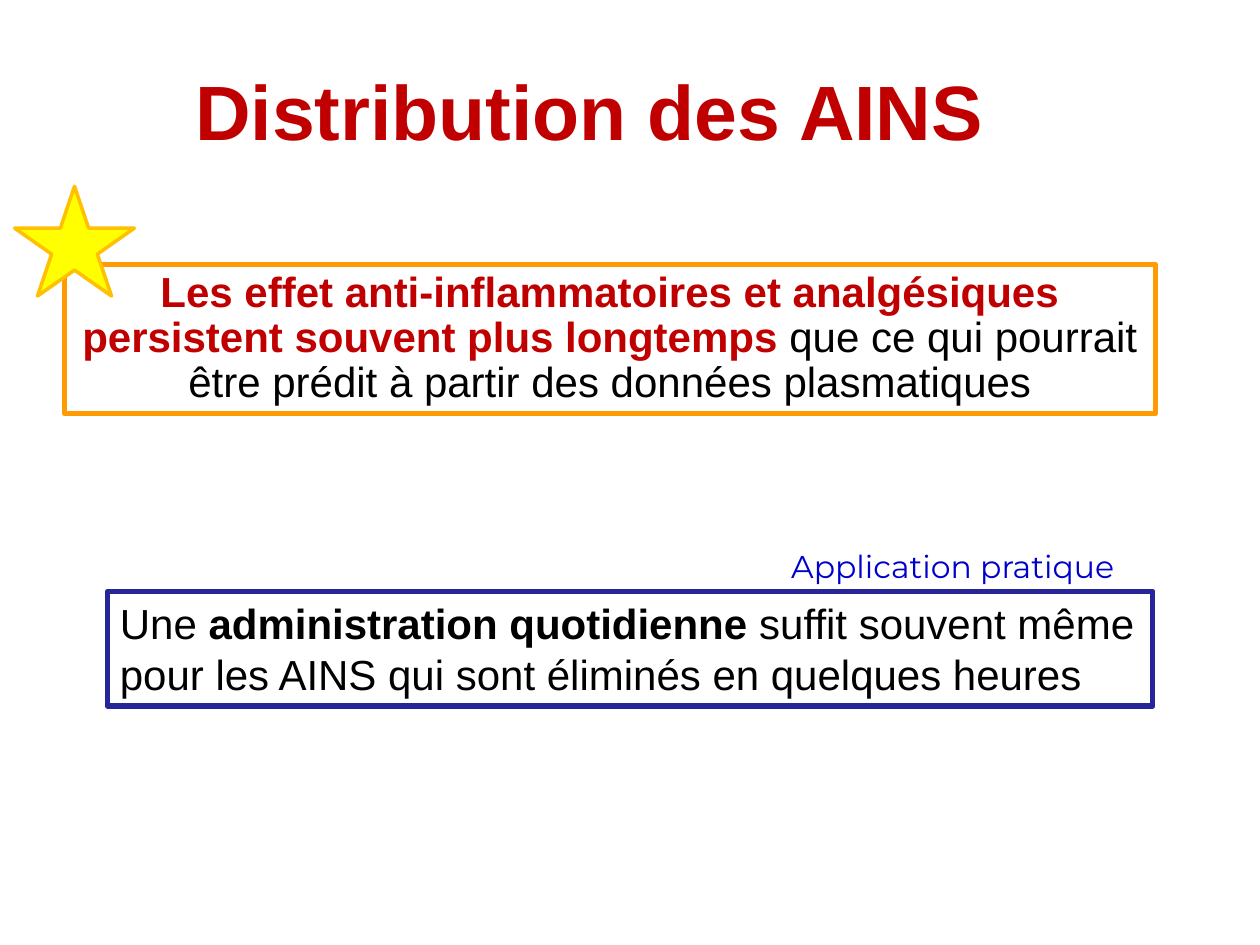
from pptx import Presentation
from pptx.dml.color import RGBColor as RGB
from pptx.enum.shapes import MSO_SHAPE as Shape
from pptx.enum.text import MSO_ANCHOR as Anchor, PP_ALIGN as Align
from pptx.util import Pt

COLORS = {
    "red": "C00000", "black": "000000", "blue": "0000CC", "navy": "262699",
    "orange": "FE9B03", "gold": "FFC000", "yellow": "FFFF00",
}


def color(name):
    return RGB.from_string(COLORS[name])


def write(shape, runs, size, font="Arial", wrap=True, anchor=Anchor.TOP, **style):
    frame = shape.text_frame
    frame.word_wrap = wrap
    frame.vertical_anchor = anchor
    para = frame.paragraphs[0]
    for key, value in style.items():
        setattr(para, key, value)
    for text, tint, bold in runs:
        run = para.add_run()
        run.text = text
        look = {"name": font, "size": Pt(size), "bold": bold}
        for key, value in look.items():
            setattr(run.font, key, value)
        run.font.color.rgb = color(tint)


deck = Presentation()
deck.slide_width, deck.slide_height = Pt(720), Pt(540)
slide = deck.slides.add_slide(deck.slide_layouts[6])
shapes = slide.shapes

# Title
title = shapes.add_textbox(Pt(31), Pt(15), Pt(612), Pt(102))
write(title, [("Distribution des AINS", "red", True)], 44,
      anchor=Anchor.MIDDLE, alignment=Align.CENTER, line_spacing=0.9)

# Frames and star, back to front
parts = {
    "effect": (Shape.RECTANGLE, 36.7, 151.2, 623.5, 85, None, "orange", 3),
    "star": (Shape.STAR_5_POINT, 8.4, 106.5, 68.4, 62.7, "yellow", "gold", 2),
    "advice": (Shape.RECTANGLE, 61.4, 338, 597.4, 65.5, None, "navy", 3),
}
made = {}
for name, (kind, left, top, width, height, fill, line, weight) in parts.items():
    part = shapes.add_shape(kind, Pt(left), Pt(top), Pt(width), Pt(height))
    part.shadow.inherit = False
    if fill:
        part.fill.solid()
        part.fill.fore_color.rgb = color(fill)
    else:
        part.fill.background()
    part.line.color.rgb = color(line)
    part.line.width = Pt(weight)
    made[name] = part

# Framed statements
write(made["effect"], [
    ("Les effet anti-inflammatoires et analgésiques persistent souvent plus longtemps ",
     "red", True),
    ("que ce qui pourrait être prédit à partir des données plasmatiques", "black", False),
], 24, alignment=Align.CENTER, line_spacing=0.9)
write(made["advice"], [
    ("Une ", "black", False),
    ("administration quotidienne ", "black", True),
    ("suffit souvent même pour les AINS qui sont éliminés en quelques heures",
     "black", False),
], 24, alignment=Align.LEFT, line_spacing=1.0)

# Label above the advice
label = shapes.add_textbox(Pt(445), Pt(308.9), Pt(216.7), Pt(28.8))
write(label, [("Application pratique", "blue", False)], 18, "Montserrat",
      wrap=False, alignment=Align.LEFT)

deck.save("out.pptx")
